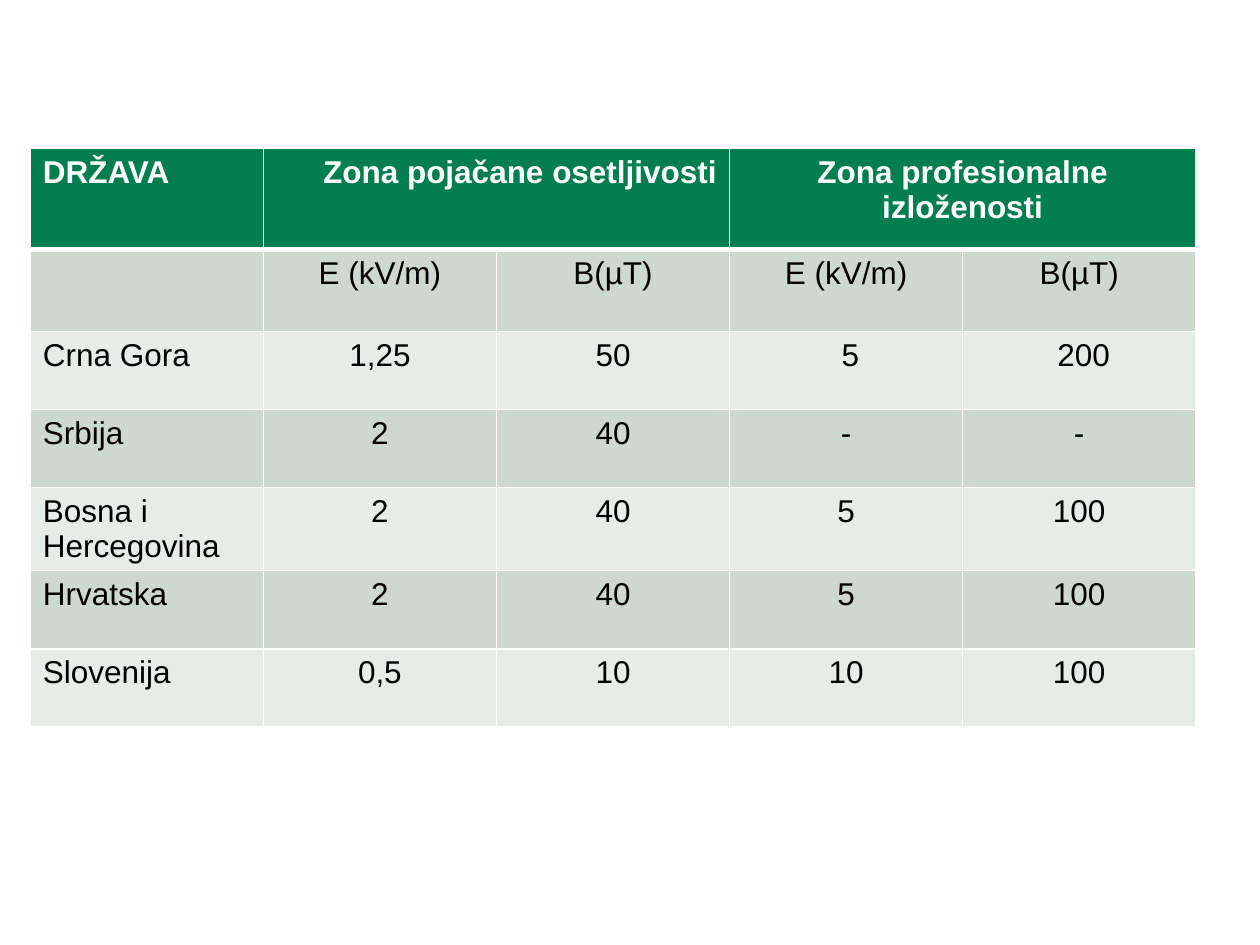
from dataclasses import dataclass
from pptx import Presentation
from pptx.dml.color import RGBColor as Rgb
from pptx.enum.text import PP_ALIGN as Al
from pptx.oxml import parse_xml
from pptx.oxml.ns import nsdecls
from pptx.util import Inches, Pt


@dataclass(frozen=True)
class Theme:
    font: str = "Arial"
    size: int = 18
    head: str = "007E4F"
    bands: tuple = ("CCD8D0", "E7ECE9")
    light: str = "FFFFFF"
    dark: str = "000000"
    thin: int = 1
    thick: int = 3


class Deck:
    """Hold the theme and the current slide, and draw tables on it."""

    def __init__(self, theme):
        self.theme = theme
        self.prs = Presentation()
        self.prs.slide_width, self.prs.slide_height = Inches(10), Inches(7.5)
        self.slide = self.prs.slides.add_slide(self.prs.slide_layouts[6])

    def edge(self, cell, row):
        t = self.theme
        top = t.thick if row == 1 else t.thin
        base = t.thick if row == 0 else t.thin
        sides = {"L": t.thin, "R": t.thin, "T": top, "B": base}
        props = cell._tc.get_or_add_tcPr()
        for spot, (side, width) in enumerate(sides.items()):
            props.insert(spot, parse_xml(
                f'<a:ln{side} {nsdecls("a")} w="{Pt(width)}"><a:solidFill>'
                f'<a:srgbClr val="{t.light}"/></a:solidFill></a:ln{side}>'))

    def text(self, cell, words, align, color, bold):
        para = cell.text_frame.paragraphs[0]
        para.alignment = align
        run = para.add_run()
        run.text = words
        font = run.font
        font.name, font.size, font.bold = self.theme.font, Pt(self.theme.size), bold
        font.color.rgb = Rgb.from_string(color)

    def table(self, data, left, top, width, highs, spans, aligns):
        t = self.theme
        count = len(data[0])
        grid = self.slide.shapes.add_table(
            len(data), count, Inches(left), Inches(top),
            Inches(width * count), Inches(sum(highs))).table
        for col in grid.columns:
            col.width = Inches(width)
        for row, high in zip(grid.rows, highs):
            row.height = Inches(high)
        for row, first, last in spans:
            grid.cell(row, first).merge(grid.cell(row, last))
        for r, line in enumerate(data):
            fill, color = (t.bands[(r - 1) % 2], t.dark) if r else (t.head, t.light)
            for c, words in enumerate(line):
                cell = grid.cell(r, c)
                cell.fill.solid()
                cell.fill.fore_color.rgb = Rgb.from_string(fill)
                self.edge(cell, r)
                if words:
                    align = aligns.get((r, c), Al.CENTER if c else Al.LEFT)
                    self.text(cell, words, align, color, r == 0)

    def save(self):
        self.prs.save("out.pptx")


def main():
    units = ["E (kV/m)", "B(µT)"]
    data = [
        ["DRŽAVA", "Zona pojačane osetljivosti", "", "Zona profesionalne izloženosti", ""],
        ["", *units, *units],
        ["Crna Gora", "1,25", "50", " 5", " 200"],
        ["Srbija", "2", "40", "-", "-"],
        ["Bosna i Hercegovina", "2", "40", "5", "100"],
        ["Hrvatska", "2", "40", "5", "100"],
        ["Slovenija", "0,5", "10", "10", "100"],
    ]
    deck = Deck(Theme())
    deck.table(data, 0.24, 1.18, 1.85, [0.8, 0.65] + [0.62] * 5,
               [(0, 1, 2), (0, 3, 4)], {(0, 1): Al.RIGHT})
    deck.save()


if __name__ == "__main__":
    main()
